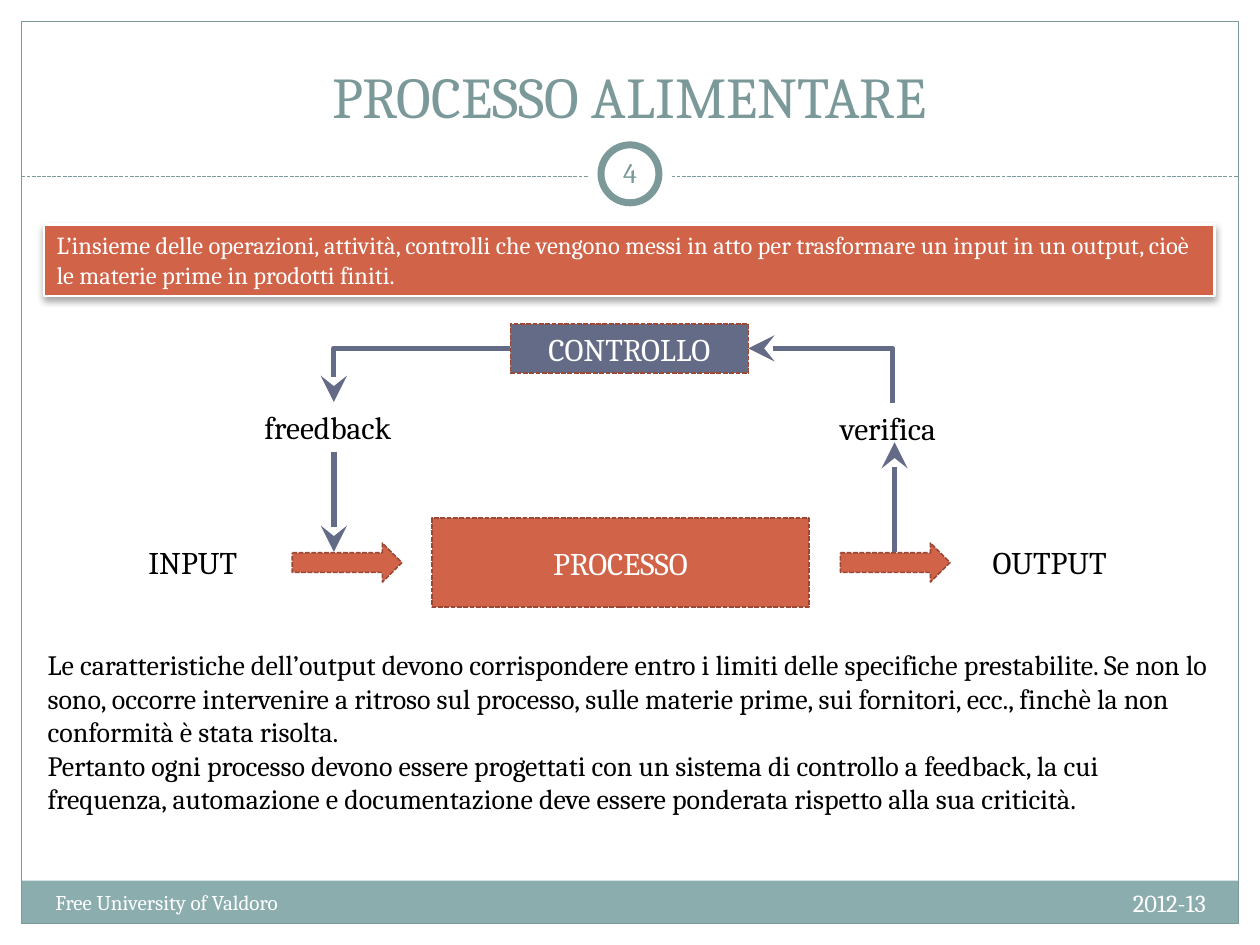
from dataclasses import dataclass

from lxml.etree import SubElement
from pptx import Presentation
from pptx.dml.color import RGBColor
from pptx.enum.dml import MSO_LINE
from pptx.enum.shapes import MSO_CONNECTOR, MSO_SHAPE
from pptx.enum.text import MSO_ANCHOR, MSO_AUTO_SIZE, PP_ALIGN
from pptx.oxml.ns import qn
from pptx.util import Inches, Pt

CELL = Inches(0.1)
COLUMNS, ROWS = 100, 75
FONT = "Cambria"
TEAL, PALE_TEAL = "7C999A", "8CADAE"
ORANGE, RUST, SLATE = "D16349", "9B4936", "646B86"
WHITE, BLACK = "FFFFFF", "000000"
TOP, LEFT, BOTTOM, RIGHT = range(4)


@dataclass
class Box:
    """A region of the page, measured in grid cells."""

    left: float
    top: float
    width: float
    height: float

    def inner(self, left, top, width, height):
        """Return a box offset from this one's top left corner."""
        return Box(self.left + left, self.top + top, width, height)

    def frame(self):
        """Return left, top, width and height as slide lengths."""
        return [round(n * CELL) for n in (self.left, self.top, self.width, self.height)]


def colour(value):
    """Turn a hex string into a colour."""
    return RGBColor.from_string(value)


def write(shape, text, size, ink, align=PP_ALIGN.LEFT, anchor=MSO_ANCHOR.TOP):
    """Put formatted text into a shape."""
    frame = shape.text_frame
    frame.text = text
    frame.word_wrap = True
    frame.vertical_anchor = anchor
    for para in frame.paragraphs:
        para.alignment = align
        for span in para.runs:
            span.font.name = FONT
            span.font.size = Pt(size)
            span.font.color.rgb = colour(ink)


def add_text(page, box, text, size, ink, **layout):
    """Add a wrapping text box."""
    shape = page.shapes.add_textbox(*box.frame())
    write(shape, text, size, ink, **layout)
    return shape


def add_label(page, box, text):
    """Add a one-line label that grows with its text."""
    shape = add_text(page, box, text, 18, BLACK)
    shape.text_frame.word_wrap = False
    shape.text_frame.auto_size = MSO_AUTO_SIZE.SHAPE_TO_FIT_TEXT
    return shape


def set_line(line, ink, width, dashed=False):
    """Style an outline or a connector's line."""
    line.color.rgb = colour(ink)
    line.width = Pt(width)
    if dashed:
        line.dash_style = MSO_LINE.SQUARE_DOT


def add_block(page, kind, box, fill=None, ink=None, width=0.9, dashed=False):
    """Add a flat preset shape with an optional fill and outline."""
    shape = page.shapes.add_shape(kind, *box.frame())
    shape.shadow.inherit = False
    if fill:
        shape.fill.solid()
        shape.fill.fore_color.rgb = colour(fill)
    else:
        shape.fill.background()
    if ink:
        set_line(shape.line, ink, width, dashed)
    else:
        shape.line.fill.background()
    return shape


def add_line(page, box, kind=MSO_CONNECTOR.STRAIGHT, ink=SLATE, width=3, dashed=False, arrow=None):
    """Add a connector across a box, with an arrowhead at headEnd or tailEnd."""
    left, top, across, down = box.frame()
    line = page.shapes.add_connector(kind, left, top, left + across, top + down)
    set_line(line.line, ink, width, dashed)
    properties = line._element.spPr
    if arrow:
        stroke = properties.find(qn("a:ln"))
        SubElement(stroke, qn(f"a:{arrow}"), type="stealth", w="lg", len="lg")
    SubElement(properties, qn("a:effectLst"))
    return line


def add_bend(page, start, side, end, arrow):
    """Join a side of one shape to the top of another with a single bend."""
    line = add_line(page, Box(0, 0, 1, 1), MSO_CONNECTOR.ELBOW, arrow=arrow)
    line._element.spPr.find(qn("a:prstGeom")).set("prst", "bentConnector2")
    line.begin_connect(start, side)
    line.end_connect(end, TOP)


def draw_header(page, box):
    """Draw the title, the dashed rule and the page number ring."""
    title = page.shapes.title
    title.left, title.top, title.width, title.height = box.inner(1.6, 0.8, 93.3, 8.3).frame()
    write(title, "PROCESSO ALIMENTARE", 33, TEAL, PP_ALIGN.CENTER, MSO_ANCHOR.BOTTOM)
    add_line(page, box.inner(0, 12.3, box.width, 0), ink=TEAL, width=0.75, dashed=True)
    middle = box.width / 2
    add_block(page, MSO_SHAPE.OVAL, box.inner(middle - 3.35, 8.8, 6.7, 6.7), WHITE)
    add_block(page, MSO_SHAPE.OVAL, box.inner(middle - 2.3, 9.8, 4.6, 4.6), WHITE, TEAL, 4)
    number = add_text(page, box.inner(middle - 2.5, 9.6, 5, 4.8), "4", 16, TEAL,
                      align=PP_ALIGN.CENTER, anchor=MSO_ANCHOR.MIDDLE)
    frame = number.text_frame
    frame.margin_left = frame.margin_right = frame.margin_top = frame.margin_bottom = Inches(0.05)


def draw_footer(page, box):
    """Draw the footer band with its two texts."""
    add_block(page, MSO_SHAPE.RECTANGLE, box, PALE_TEAL)
    add_text(page, box.inner(1.7, 0.2, 39.2, 4), "Free University of Valdoro", 12, WHITE)
    add_text(page, box.inner(61.7, 0.1, 33.3, 4), "2012-13", 14, WHITE, align=PP_ALIGN.RIGHT)


def draw_banner(page, box):
    """Draw the definition in a shadowed banner."""
    banner = add_block(page, MSO_SHAPE.RECTANGLE, box, ORANGE, WHITE, 1.57)
    write(banner, "L’insieme delle operazioni, attività, controlli che vengono messi in atto "
          "per trasformare un input in un output, cioè le materie prime in prodotti finiti.",
          14, WHITE)
    effects = banner._element.spPr.find(qn("a:effectLst"))
    shadow = SubElement(effects, qn("a:outerShdw"), blurRad=str(Pt(4)), dist=str(Pt(2)),
                        dir="5400000", rotWithShape="0")
    ink = SubElement(shadow, qn("a:srgbClr"), val=BLACK)
    SubElement(ink, qn("a:alpha"), val="35000")


def draw_loop(page, box):
    """Draw the process with its control loop."""
    stages = [("PROCESSO", box.inner(23.5, 15.4, 29.9, 7.1), ORANGE),
              ("CONTROLLO", box.inner(29.7, 0, 18.9, 3.9), SLATE)]
    blocks = {}
    for text, place, fill in stages:
        block = add_block(page, MSO_SHAPE.RECTANGLE, place, fill, RUST, dashed=True)
        write(block, text, 18, WHITE, PP_ALIGN.CENTER, MSO_ANCHOR.MIDDLE)
        blocks[text] = block
    for left in (12.4, 55.9):
        add_block(page, MSO_SHAPE.RIGHT_ARROW, box.inner(left, 17.4, 8.7, 3.1),
                  ORANGE, RUST, dashed=True)
    labels = {text: add_label(page, box.inner(left, top, width, 4), text)
              for text, left, top, width in [("INPUT", 0, 16.9, 9.9), ("OUTPUT", 67, 16.9, 12.4),
                                             ("freedback", 9.2, 6.2, 13),
                                             ("verifica", 54.9, 6.3, 10.3)]}
    down = add_line(page, box.inner(15.7, 10.2, 0, 7.9), arrow="tailEnd")
    down.begin_connect(labels["freedback"], BOTTOM)
    add_line(page, box.inner(60.2, 9.4, 0, 8.7), arrow="headEnd")
    add_bend(page, blocks["CONTROLLO"], RIGHT, labels["verifica"], "headEnd")
    add_bend(page, blocks["CONTROLLO"], LEFT, labels["freedback"], "tailEnd")


def draw_comment(page, box):
    """Write the closing paragraphs."""
    text = "\n".join([
        "Le caratteristiche dell’output devono corrispondere entro i limiti delle specifiche "
        "prestabilite. Se non lo sono, occorre intervenire a ritroso sul processo, sulle materie "
        "prime, sui fornitori, ecc., finchè la non conformità è stata risolta.",
        "Pertanto ogni processo devono essere progettati con un sistema di controllo a feedback, "
        "la cui frequenza, automazione e documentazione deve essere ponderata rispetto alla sua "
        "criticità."])
    add_text(page, box, text, 16, BLACK)


def main():
    """Build the slide and save the deck."""
    deck = Presentation()
    deck.slide_width, deck.slide_height = COLUMNS * CELL, ROWS * CELL
    page = deck.slides.add_slide(deck.slide_layouts[5])
    border = Box(1.7, 1.7, COLUMNS - 3.4, ROWS - 3.4)
    draw_footer(page, border.inner(0, 68.2, border.width, 3.4))
    add_block(page, MSO_SHAPE.RECTANGLE, border, ink=TEAL, width=0.75)
    draw_header(page, border)
    draw_banner(page, Box(3.5, 17.8, 92.9, 5.7))
    draw_loop(page, Box(10.8, 25.7, 79.4, 22.5))
    draw_comment(page, Box(2.8, 50.9, 94.5, 14.5))
    deck.save("out.pptx")


if __name__ == "__main__":
    main()
